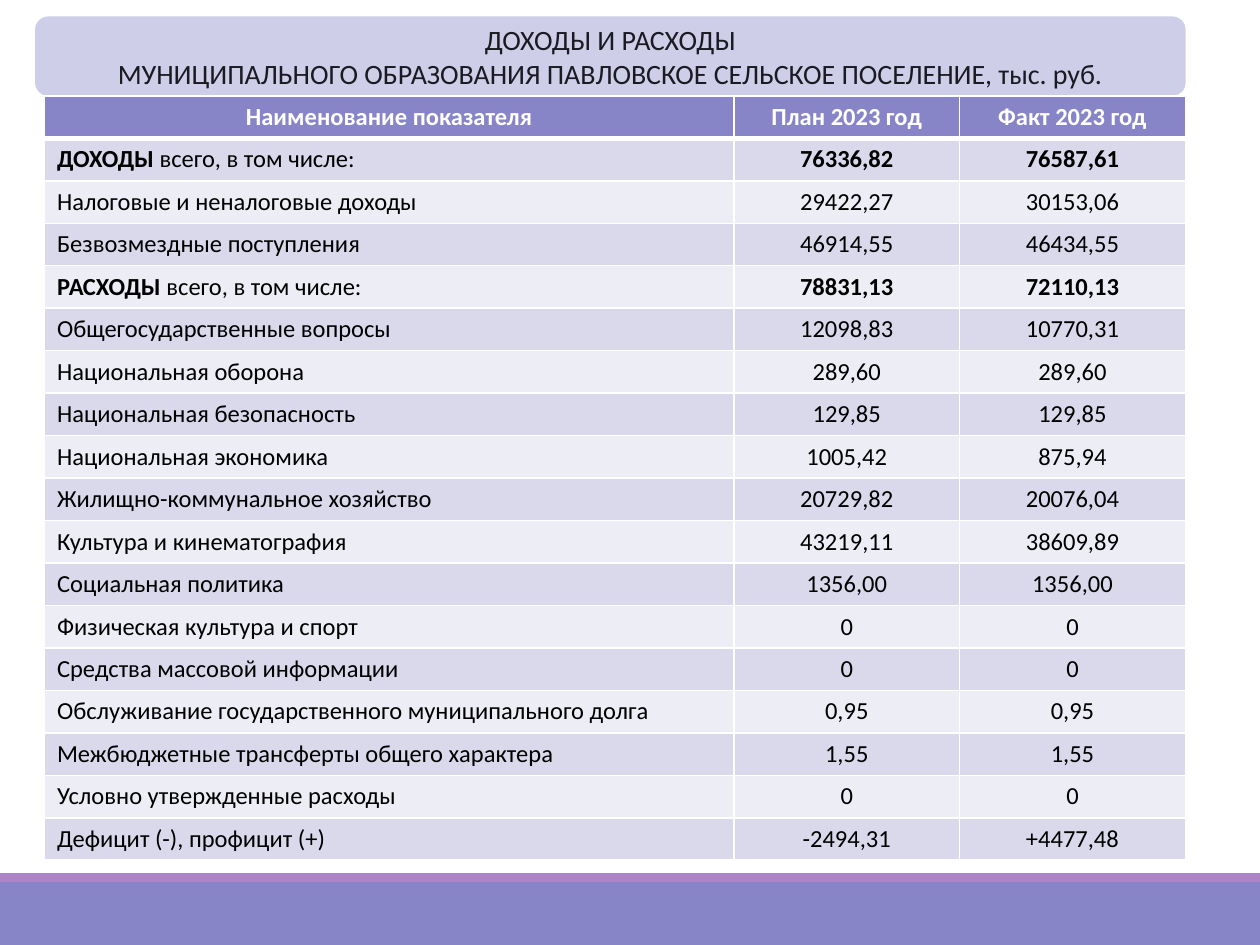
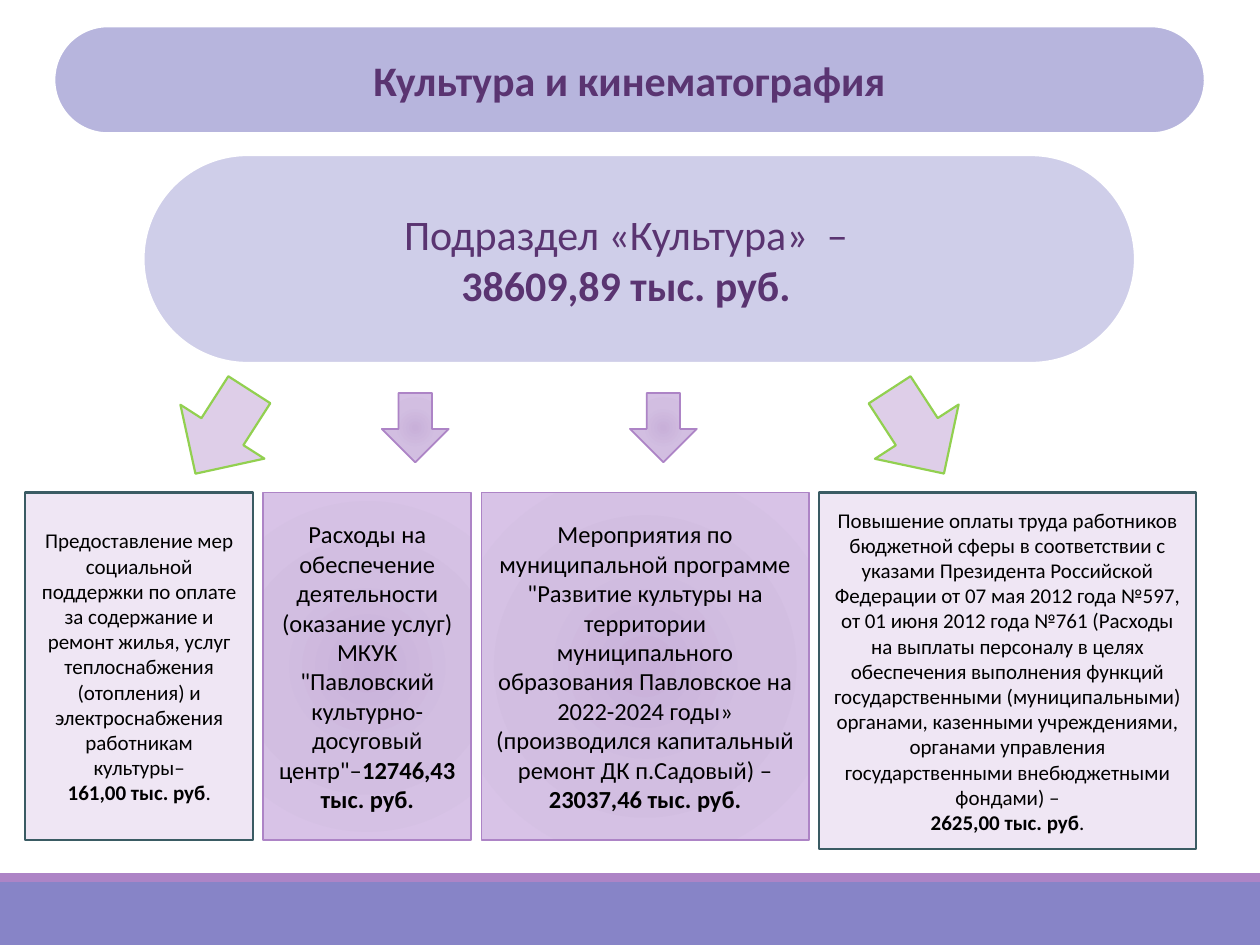
from dataclasses import dataclass

from pptx import Presentation
from pptx.dml.color import RGBColor
from pptx.enum.shapes import MSO_SHAPE
from pptx.enum.text import MSO_ANCHOR, PP_ALIGN
from pptx.oxml import parse_xml
from pptx.oxml.ns import nsdecls
from pptx.util import Pt

RECT = MSO_SHAPE.RECTANGLE
ROUND = MSO_SHAPE.ROUNDED_RECTANGLE
DOWN_ARROW = MSO_SHAPE.DOWN_ARROW
MIDDLE = MSO_ANCHOR.MIDDLE
CENTER = PP_ALIGN.CENTER
LEFT = PP_ALIGN.LEFT

FONT = "Calibri"
WHITE = "FFFFFF"
BLACK = "000000"
INDIGO = "8784C7"
VIOLET = "AD84C6"
LAVENDER = "CFCEE9"
PLUM = "5A3471"
ROW_FILLS = ("D9D9EB", "EDEDF5")
GLOW_STOPS = ((0, "C8B0D9"), (45, "D2BEE1"), (100, "D8C3E7"))

SLIDE_W, SLIDE_H = 720, 540


@dataclass(frozen=True)
class Look:
    fill: str = ""
    line: str = ""
    line_w: float = 1.25


@dataclass(frozen=True)
class Caption:
    lines: tuple[str, ...]
    size: float
    color: str = BLACK
    extra_right: float = 0


@dataclass(frozen=True)
class Block:
    kind: int
    left: float
    top: float
    width: float
    height: float
    look: Look
    caption: Caption | None = None
    corner: float | None = None
    rotation: float = 0


@dataclass(frozen=True)
class Expense:
    width: float
    height: float
    look: Look
    caption: Caption


GLOW = Look(line=VIOLET, line_w=1)
PALE = Look("EFE6F4", "3A5B63")
SLANTED = Look("DECEE8", "92D050")

BANDS = (
    Block(RECT, 0, 504, SLIDE_W, 36, Look(INDIGO)),
    Block(RECT, 0, 499, SLIDE_W, 5, Look(VIOLET)),
)

BUDGET_TITLE = Block(
    ROUND, 20, 9.4, 657.5, 45.4, Look(LAVENDER),
    Caption(("ДОХОДЫ И РАСХОДЫ",
             "МУНИЦИПАЛЬНОГО ОБРАЗОВАНИЯ ПАВЛОВСКОЕ СЕЛЬСКОЕ ПОСЕЛЕНИЕ, тыс. руб."),
            16, "1B1A22"))

BUDGET_COLUMNS = (394, 129, 129)
BUDGET_ROW_H = 24.1
BUDGET_ROWS = (
    ("*Наименование показателя*", "*План 2023 год*", "*Факт 2023 год*"),
    ("*ДОХОДЫ* всего, в том числе:", "*76336,82*", "*76587,61*"),
    ("Налоговые и неналоговые доходы", "29422,27", "30153,06"),
    ("Безвозмездные поступления", "46914,55", "46434,55"),
    ("*РАСХОДЫ* всего, в том числе:", "*78831,13*", "*72110,13*"),
    ("Общегосударственные вопросы", "12098,83", "10770,31"),
    ("Национальная оборона", "289,60", "289,60"),
    ("Национальная безопасность", "129,85", "129,85"),
    ("Национальная экономика", "1005,42", "875,94"),
    ("Жилищно-коммунальное хозяйство", "20729,82", "20076,04"),
    ("Культура и кинематография", "43219,11", "38609,89"),
    ("Социальная политика", "1356,00", "1356,00"),
    ("Физическая культура и спорт", "0", "0"),
    ("Средства массовой информации", "0", "0"),
    ("Обслуживание государственного муниципального долга", "0,95", "0,95"),
    ("Межбюджетные трансферты общего характера", "1,55", "1,55"),
    ("Условно утвержденные расходы", "0", "0"),
    ("Дефицит (-), профицит (+)", "-2494,31", "+4477,48"),
)

CULTURE_BLOCKS = (
    Block(ROUND, 31, 15, 657.5, 61.2, Look("B7B5DD", WHITE),
          Caption(("*Культура и кинематография*",), 24, PLUM), corner=0.5),
    Block(ROUND, 82, 88.6, 566.6, 118.8, Look(LAVENDER, WHITE),
          Caption(("Подраздел «Культура»  –", "*38609,89 тыс. руб.*"), 24, PLUM,
                  extra_right=15), corner=0.5),
    Block(DOWN_ARROW, 98.6, 218.2, 57, 57, SLANTED, rotation=32.7),
    Block(DOWN_ARROW, 218.2, 224.6, 38.2, 39.6, GLOW),
    Block(DOWN_ARROW, 360, 224.6, 38.2, 39.6, GLOW),
    Block(DOWN_ARROW, 495.4, 218.2, 57, 57, SLANTED, rotation=327),
)

EXPENSE_LEFT, EXPENSE_TOP, EXPENSE_GAP = 14.4, 281.5, 5.8
EXPENSES = (
    Expense(130.3, 198.7, PALE, Caption((
        "Предоставление мер социальной поддержки по оплате за содержание и ремонт жилья, "
        "услуг теплоснабжения (отопления) и электроснабжения работникам культуры–",
        "*161,00 тыс. руб*."), 12)),
    Expense(118.8, 198.7, GLOW, Caption((
        'Расходы на обеспечение деятельности (оказание услуг) МКУК "Павловский '
        'культурно-досуговый центр"–*12746,43 тыс. руб.*',), 14)),
    Expense(187.2, 198.7, GLOW, Caption((
        'Мероприятия по муниципальной программе "Развитие культуры на территории '
        "муниципального образования Павловское на 2022-2024 годы» (производился "
        "капитальный ремонт ДК п.Садовый) – *23037,46 тыс. руб.*",), 14)),
    Expense(215.3, 203.8, PALE, Caption((
        "Повышение оплаты труда работников бюджетной сферы в соответствии с указами "
        "Президента Российской Федерации от 07 мая 2012 года №597, от 01 июня 2012 года "
        "№761 (Расходы на выплаты персоналу в целях обеспечения выполнения функций "
        "государственными (муниципальными) органами, казенными учреждениями, органами "
        "управления государственными внебюджетными фондами) –",
        "*2625,00 тыс. руб*."), 12)),
)


def rgb(value: str) -> RGBColor:
    return RGBColor.from_string(value)


def write(p, text: str, size: float, color: str, align) -> None:
    p.alignment = align
    p.font.name = FONT
    p.font.size = Pt(size)
    p.font.color.rgb = rgb(color)
    for i, part in enumerate(text.split("*")):
        if part:
            r = p.add_run()
            r.text = part
            r.font.bold = i % 2 == 1


def fill_glow(sp) -> None:
    stops = "".join(f'<a:gs pos="{pos * 1000}"><a:srgbClr val="{color}"/></a:gs>'
                    for pos, color in GLOW_STOPS)
    grad = parse_xml(
        f'<a:gradFill {nsdecls("a")} rotWithShape="1"><a:gsLst>{stops}</a:gsLst>'
        '<a:path path="circle"><a:fillToRect l="50000" t="50000" r="50000" b="50000"/>'
        "</a:path></a:gradFill>")
    sp._element.spPr.find("{*}prstGeom").addnext(grad)


def draw(slide, block: Block) -> None:
    sp = slide.shapes.add_shape(block.kind, Pt(block.left), Pt(block.top),
                                Pt(block.width), Pt(block.height))
    sp.shadow.inherit = False
    sp.rotation = block.rotation
    if block.corner is not None:
        sp.adjustments[0] = block.corner
    if block.look.fill:
        sp.fill.solid()
        sp.fill.fore_color.rgb = rgb(block.look.fill)
    else:
        fill_glow(sp)
    if block.look.line:
        sp.line.color.rgb = rgb(block.look.line)
        sp.line.width = Pt(block.look.line_w)
    else:
        sp.line.fill.background()
    if block.caption:
        caption = block.caption
        tf = sp.text_frame
        tf.word_wrap = True
        tf.vertical_anchor = MIDDLE
        tf.margin_right = Pt(7.2 + caption.extra_right)
        for i, line in enumerate(caption.lines):
            p = tf.add_paragraph() if i else tf.paragraphs[0]
            write(p, line, caption.size, caption.color, CENTER)


def border(cell, bottom_w: float) -> None:
    tc_pr = cell._tc.get_or_add_tcPr()
    for i, side in enumerate("LRTB"):
        width = Pt(bottom_w if side == "B" else 1)
        tc_pr.insert(i, parse_xml(
            f'<a:ln{side} {nsdecls("a")} w="{width}"><a:solidFill>'
            f'<a:srgbClr val="{WHITE}"/></a:solidFill></a:ln{side}>'))


def draw_budget_table(slide) -> None:
    tbl = slide.shapes.add_table(
        len(BUDGET_ROWS), len(BUDGET_COLUMNS), Pt(25.4), Pt(54.8),
        Pt(sum(BUDGET_COLUMNS)), Pt(BUDGET_ROW_H * len(BUDGET_ROWS))).table
    for column, width in zip(tbl.columns, BUDGET_COLUMNS):
        column.width = Pt(width)
    for i, values in enumerate(BUDGET_ROWS):
        header = i == 0
        tbl.rows[i].height = Pt(BUDGET_ROW_H)
        for j, value in enumerate(values):
            cell = tbl.cell(i, j)
            cell.fill.solid()
            cell.fill.fore_color.rgb = rgb(INDIGO if header else ROW_FILLS[(i - 1) % 2])
            border(cell, 3 if header else 1)
            write(cell.text_frame.paragraphs[0], value, 14,
                  WHITE if header else BLACK, CENTER if header or j else LEFT)


def add_slide(prs):
    slide = prs.slides.add_slide(prs.slide_layouts[6])
    for band in BANDS:
        draw(slide, band)
    return slide


def build_budget(prs) -> None:
    slide = add_slide(prs)
    draw(slide, BUDGET_TITLE)
    draw_budget_table(slide)


def build_culture(prs) -> None:
    slide = add_slide(prs)
    for block in CULTURE_BLOCKS:
        draw(slide, block)
    left = EXPENSE_LEFT
    for e in EXPENSES:
        draw(slide, Block(RECT, left, EXPENSE_TOP, e.width, e.height, e.look, e.caption))
        left += e.width + EXPENSE_GAP


def main() -> None:
    prs = Presentation()
    prs.slide_width = Pt(SLIDE_W)
    prs.slide_height = Pt(SLIDE_H)
    build_budget(prs)
    build_culture(prs)
    prs.save("out.pptx")


if __name__ == "__main__":
    main()
